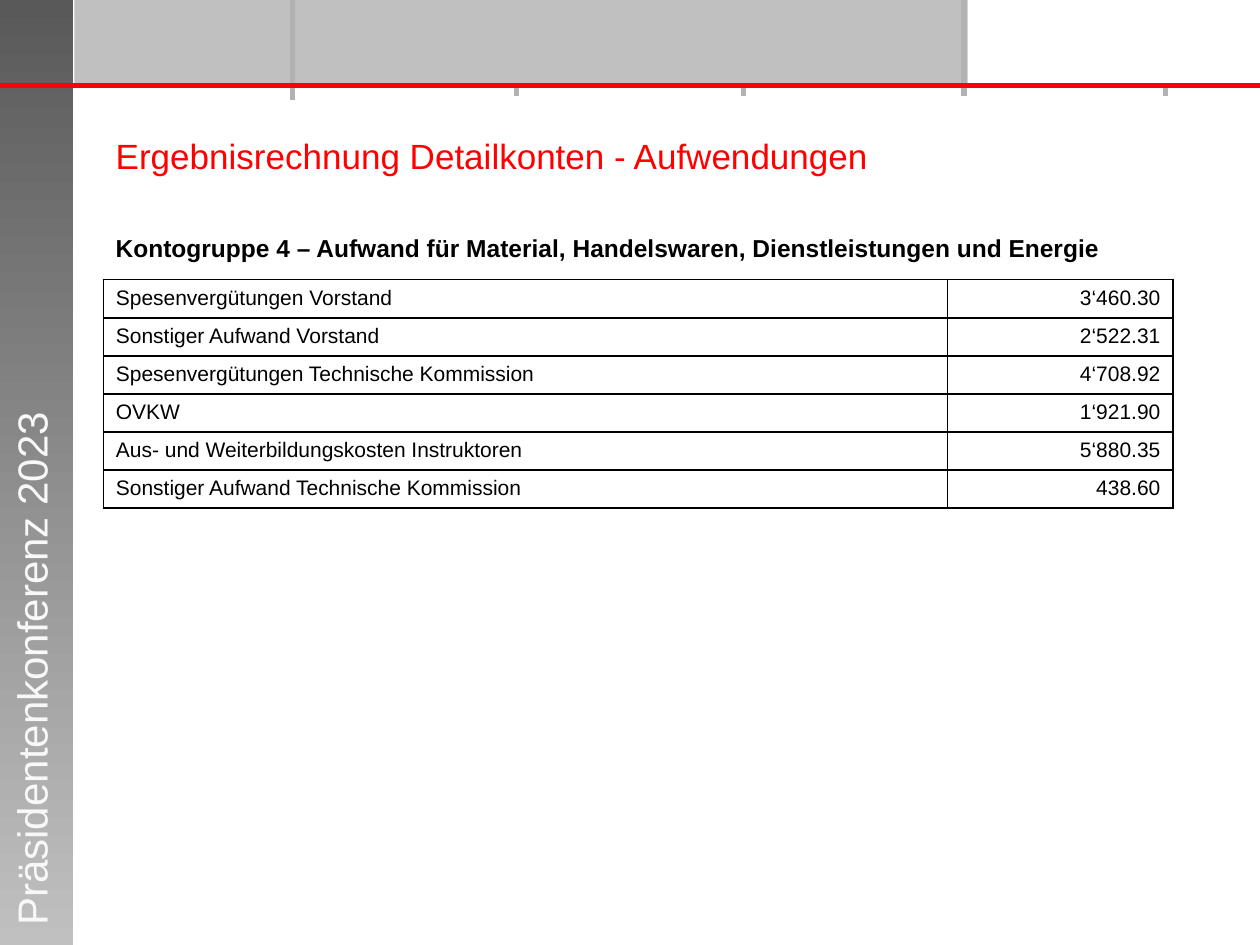
import pptx
import pptx.dml.color
import pptx.enum.shapes
import pptx.enum.text
import pptx.oxml
import pptx.oxml.ns
import pptx.util

RGBColor = pptx.dml.color.RGBColor
RED = RGBColor(0xFF, 0x00, 0x00)
BLACK = RGBColor(0x00, 0x00, 0x00)
WHITE = RGBColor(0xFF, 0xFF, 0xFF)
OFF_WHITE = RGBColor(0xF8, 0xF8, 0xF8)
DARK_GREY = RGBColor(0x59, 0x59, 0x59)
LIGHT_GREY = RGBColor(0xC0, 0xC0, 0xC0)
TICK_GREY = RGBColor(0xB2, 0xB2, 0xB2)

COLUMNS, ROWS = 100, 75
RULE_ROW, TICK_END = 6.8, 7.6
EXPENSES = [
    ("Spesenvergütungen Vorstand", "3‘460.30"),
    ("Sonstiger Aufwand Vorstand", "2‘522.31"),
    ("Spesenvergütungen Technische Kommission", "4‘708.92"),
    ("OVKW", "1‘921.90"),
    ("Aus- und Weiterbildungskosten Instruktoren", "5‘880.35"),
    ("Sonstiger Aufwand Technische Kommission", "438.60"),
]


class SlideBuilder:
    """Places elements on a slide; lengths are columns and rows of its grid."""

    font_name = "Arial"
    line_width = pptx.util.Pt(3)

    def __init__(self, presentation):
        self.slide = presentation.slides.add_slide(presentation.slide_layouts[6])
        self.column = presentation.slide_width / COLUMNS
        self.row = presentation.slide_height / ROWS

    def x(self, columns):
        return round(columns * self.column)

    def y(self, rows):
        return round(rows * self.row)

    def box(self, left, top, width, height):
        return self.x(left), self.y(top), self.x(width), self.y(height)

    def line(self, start, end, color):
        connector = self.slide.shapes.add_connector(
            pptx.enum.shapes.MSO_CONNECTOR.STRAIGHT,
            self.x(start[0]), self.y(start[1]), self.x(end[0]), self.y(end[1]))
        connector.line.color.rgb = color
        connector.line.width = self.line_width
        connector._element.spPr.append(
            pptx.oxml.parse_xml(f"<a:effectLst {pptx.oxml.ns.nsdecls('a')}/>"))

    def rectangle(self, place, top_color, bottom_color=None):
        """Fills with one colour, or with a gradient downwards when given two."""
        shape = self.slide.shapes.add_shape(
            pptx.enum.shapes.MSO_SHAPE.RECTANGLE, *self.box(*place))
        shape.shadow.inherit = False
        shape.line.fill.background()
        if bottom_color is None:
            shape.fill.solid()
            shape.fill.fore_color.rgb = top_color
            return
        shape.fill.gradient()
        shape.fill.gradient_angle = 270
        for stop, color in zip(shape.fill.gradient_stops, (top_color, bottom_color)):
            stop.color.rgb = color

    def style(self, paragraph, size, color, bold=False):
        paragraph.font.name = self.font_name
        paragraph.font.size = pptx.util.Pt(size)
        paragraph.font.color.rgb = color
        paragraph.font.bold = bold

    def text(self, place, paragraphs, rotation=0):
        """Takes paragraphs as (text, size, colour, bold, points before)."""
        shape = self.slide.shapes.add_textbox(*self.box(*place))
        shape.rotation = rotation
        frame = shape.text_frame
        frame.word_wrap = True
        for index, (text, size, color, bold, before) in enumerate(paragraphs):
            paragraph = frame.add_paragraph() if index else frame.paragraphs[0]
            paragraph.text = text
            self.style(paragraph, size, color, bold)
            if before:
                paragraph.space_before = pptx.util.Pt(before)

    def border(self, cell):
        properties = cell._tc.get_or_add_tcPr()
        for position, side in enumerate(("lnL", "lnR", "lnT", "lnB")):
            properties.insert(position, pptx.oxml.parse_xml(
                f"<a:{side} {pptx.oxml.ns.nsdecls('a')} w='12700'><a:solidFill>"
                f"<a:srgbClr val='{BLACK}'/></a:solidFill></a:{side}>"))

    def table(self, left, top, widths, row_height, records):
        place = self.box(left, top, sum(widths), row_height * len(records))
        table = self.slide.shapes.add_table(len(records), len(widths), *place).table
        table.first_row = table.horz_banding = False
        for column, width in zip(table.columns, widths):
            column.width = self.x(width)
        alignments = (pptx.enum.text.PP_ALIGN.LEFT, pptx.enum.text.PP_ALIGN.RIGHT)
        for row, record in zip(table.rows, records):
            row.height = self.y(row_height)
            for cell, text, alignment in zip(row.cells, record, alignments):
                cell.fill.solid()
                cell.fill.fore_color.rgb = WHITE
                self.border(cell)
                cell.text = text
                paragraph = cell.text_frame.paragraphs[0]
                paragraph.alignment = alignment
                self.style(paragraph, 12, BLACK)


def main():
    presentation = pptx.Presentation()
    presentation.slide_width = pptx.util.Inches(10)
    presentation.slide_height = pptx.util.Inches(7.5)
    builder = SlideBuilder(presentation)

    for column in (41, 59):
        builder.line((column, 0), (column, TICK_END), TICK_GREY)
    builder.rectangle((0, 0, 5.8, ROWS), DARK_GREY, LIGHT_GREY)
    builder.rectangle((5.9, 0, 70.9, RULE_ROW), LIGHT_GREY)
    for column, top, bottom in ((23.2, 0, 7.9), (76.5, 0, TICK_END),
                                (92.5, RULE_ROW, TICK_END)):
        builder.line((column, top), (column, bottom), TICK_GREY)
    builder.line((0, RULE_ROW), (COLUMNS, RULE_ROW), RED)

    builder.text((-19.2, 50.3, 43.3, 5),
                 [("Präsidentenkonferenz 2023", 24, OFF_WHITE, False, 0)], rotation=270)
    builder.text((8.2, 10.2, 86, 11), [
        ("Ergebnisrechnung Detailkonten - Aufwendungen", 20, RED, False, 0),
        ("Kontogruppe 4 – Aufwand für Material, Handelswaren, "
         "Dienstleistungen und Energie", 14, BLACK, True, 32),
    ])
    builder.table(8.2, 22.2, (67, 17.9), 3.02, EXPENSES)
    presentation.save("out.pptx")


if __name__ == "__main__":
    main()
